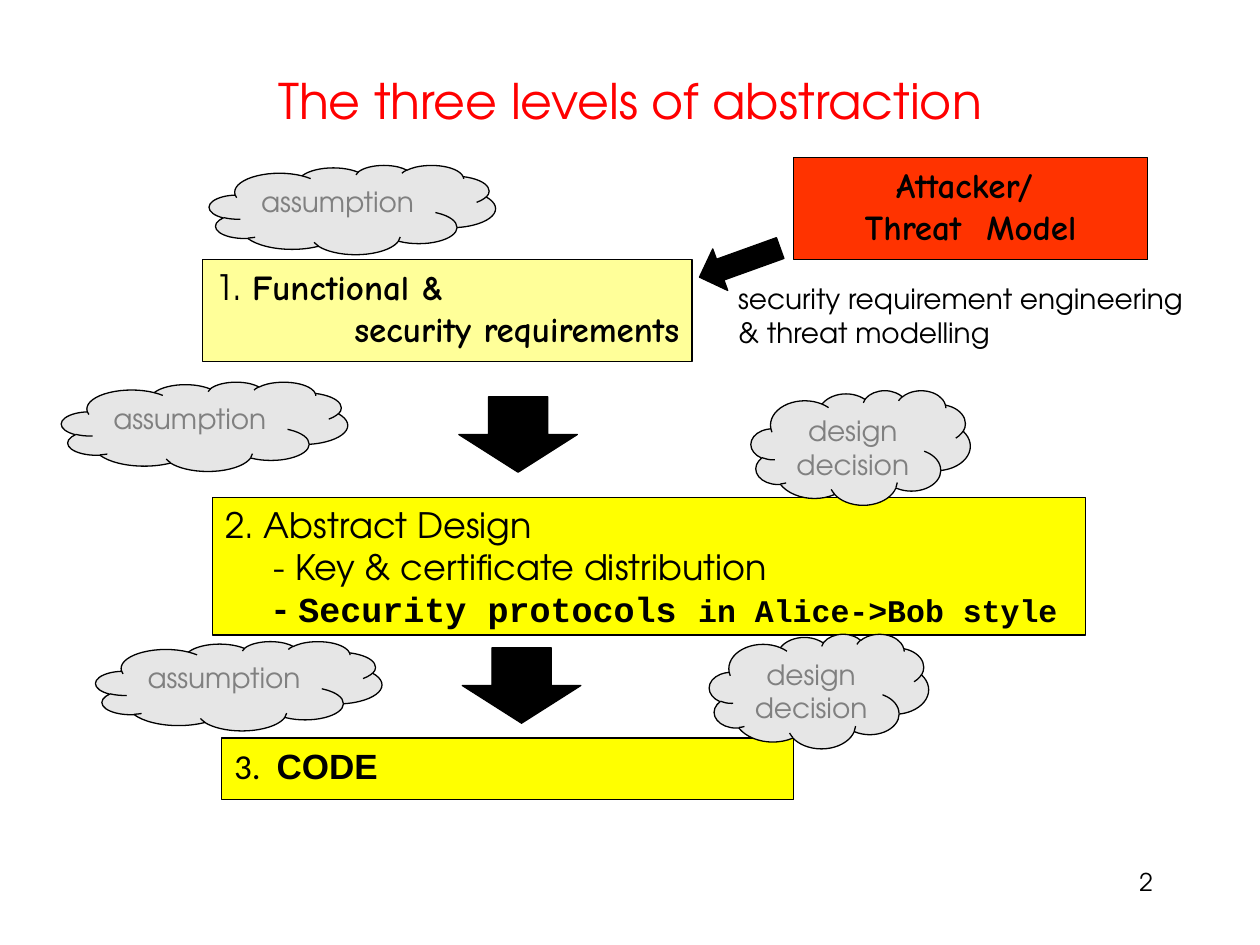
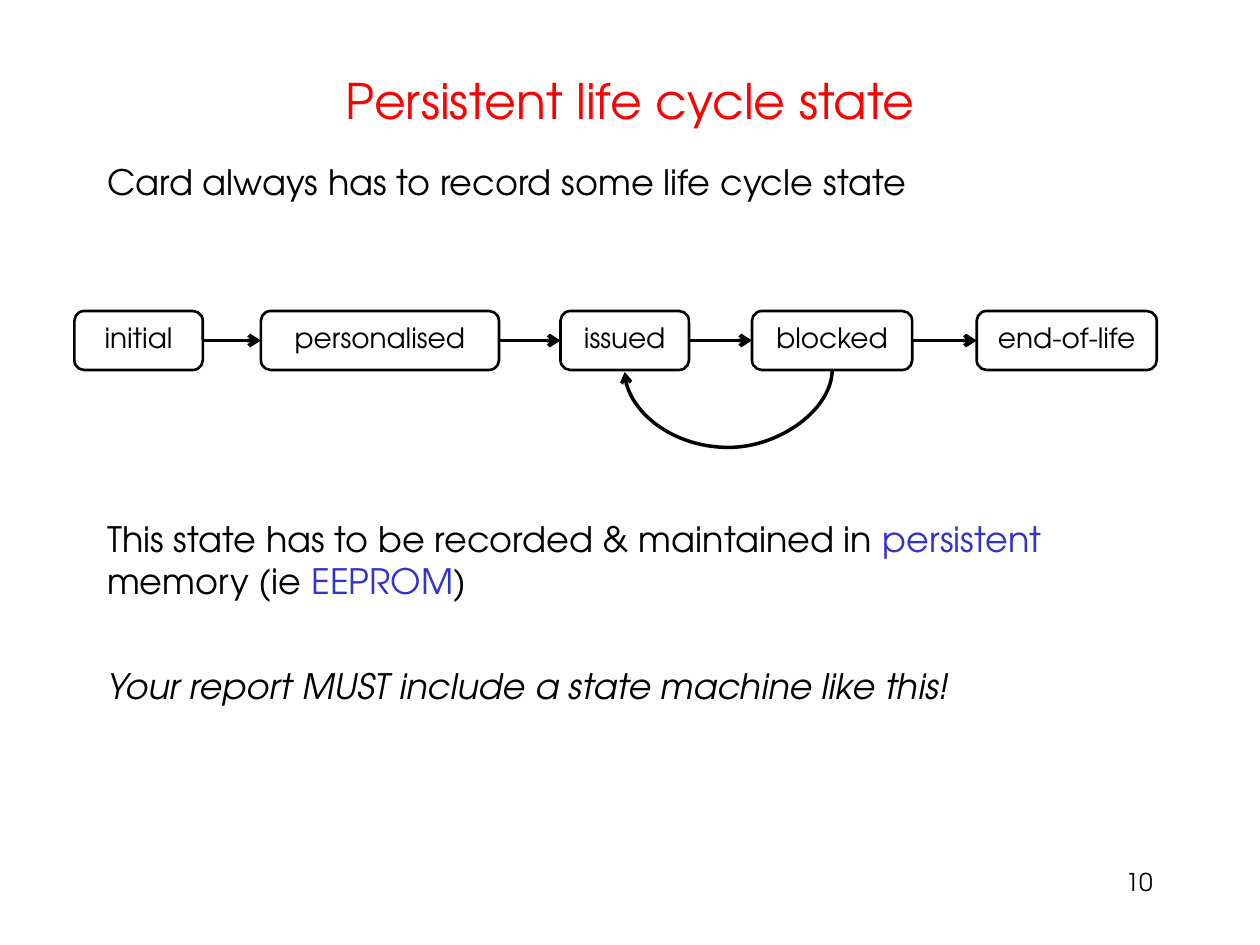
from lxml import etree
from pptx import Presentation
from pptx.dml.color import RGBColor
from pptx.enum import shapes, text
from pptx.oxml import ns
from pptx.util import Cm, Pt

COLOURS = {
    "title": "FF0000",
    "text": "000000",
    "muted": "808080",
    "emphasis": "3333CC",
    "line": "000000",
    "cloud": "E6E6E6",
    "requirements": "FFFF99",
    "level": "FFFF00",
    "threat": "FF3300",
}
FONT = "TeX Gyre Adventor"
LEFT, CENTER, RIGHT = text.PP_ALIGN.LEFT, text.PP_ALIGN.CENTER, text.PP_ALIGN.RIGHT
KIND = shapes.MSO_SHAPE
STATE_TOP, STATE_HEIGHT = 6.27, 1.19


def rgb(name):
    return RGBColor.from_string(COLOURS[name])


def run(content, **style):
    return content, style


def format_run(piece, size, color="text", font=FONT, bold=False, italic=False):
    piece.font.name = font
    piece.font.size = Pt(size)
    piece.font.bold = bold
    piece.font.italic = italic
    piece.font.color.rgb = rgb(color)


def write_paragraph(paragraph, runs, size, align=LEFT, indent=0, before=0):
    paragraph.alignment = align
    paragraph.space_before = Pt(before)
    if indent:
        paragraph._p.get_or_add_pPr().set("marL", str(Cm(indent)))
    for content, style in runs:
        piece = paragraph.add_run()
        piece.text = content
        format_run(piece, **{"size": size, **style})


def write_text(shape, paragraphs, size=20, anchor=text.MSO_ANCHOR.TOP):
    frame = shape.text_frame
    frame.word_wrap = True
    frame.vertical_anchor = anchor
    for index, (runs, layout) in enumerate(paragraphs):
        paragraph = frame.add_paragraph() if index else frame.paragraphs[0]
        write_paragraph(paragraph, runs, size, **layout)


def add_text(slide, box, paragraphs, **options):
    shape = slide.shapes.add_textbox(*map(Cm, box))
    write_text(shape, paragraphs, **options)


def add_figure(slide, kind, box, fill=None, width=0.75):
    shape = slide.shapes.add_shape(kind, *map(Cm, box))
    shape.shadow.inherit = False
    if fill:
        shape.fill.solid()
        shape.fill.fore_color.rgb = rgb(fill)
    else:
        shape.fill.background()
    shape.line.color.rgb = rgb("line")
    shape.line.width = Pt(width)
    return shape


def add_level(slide, box, fill, paragraphs):
    write_text(add_figure(slide, KIND.RECTANGLE, box, fill), paragraphs)


def add_cloud(slide, position, size, label, align):
    cloud = add_figure(slide, KIND.CLOUD, position + size, "cloud")
    write_text(cloud, [([run(label, color="muted")], {"align": align})], size=16)


def add_state(slide, left, width, label):
    box = (left, STATE_TOP, width, STATE_HEIGHT)
    state = add_figure(slide, KIND.ROUNDED_RECTANGLE, box, width=1.5)
    write_text(state, [([run(label)], {"align": CENTER})], size=16)


def add_arrow(slide, kind, start, end, width):
    arrow = slide.shapes.add_connector(kind, *map(Cm, start + end))
    arrow.line.color.rgb = rgb("line")
    arrow.line.width = Pt(width)
    line = arrow.line._get_or_add_ln()
    etree.SubElement(line, ns.qn("a:tailEnd"), type="arrow")
    etree.SubElement(arrow._element.spPr, ns.qn("a:effectLst"))
    return arrow


def add_return_arrow(slide, start_x, end_x, top, depth):
    drop = 0.04
    span = start_x - end_x
    left = (start_x + end_x - drop) / 2
    upper = top + (drop - span) / 2
    arrow = add_arrow(slide, shapes.MSO_CONNECTOR.CURVE,
                      (left, upper), (left + drop, upper + span), 2)
    properties = arrow._element.spPr
    properties.find(ns.qn("a:xfrm")).set("rot", str(90 * 60000))
    geometry = properties.find(ns.qn("a:prstGeom"))
    adjustments = geometry.find(ns.qn("a:avLst"))
    if adjustments is None:
        adjustments = etree.SubElement(geometry, ns.qn("a:avLst"))
    etree.SubElement(adjustments, ns.qn("a:gd"), name="adj1",
                     fmla=f"val {round(depth / drop * 100000)}")


def add_slide(presentation, title, number):
    slide = presentation.slides.add_slide(presentation.slide_layouts[6])
    add_text(slide, (1.91, 0.91, 21.59, 2.21),
             [([run(title, color="title")], {"align": CENTER})],
             size=28, anchor=text.MSO_ANCHOR.MIDDLE)
    add_text(slide, (18.21, 17.35, 5.28, 1.27),
             [([run(number)], {"align": RIGHT})], size=14)
    return slide


def build_abstraction_levels(presentation):
    slide = add_slide(presentation, "The three levels of abstraction", "2")
    comic = {"font": "Comic Neue", "bold": True}
    courier = {"font": "Courier New", "bold": True}
    add_level(slide, (4.29, 10.03, 17.6, 2.77), "level", [
        ([run("2. Abstract Design")], {}),
        ([run("- Key & certificate distribution")], {"indent": 0.98}),
        ([run("- ", bold=True), run("Security protocols ", **courier),
          run("in Alice->Bob style", size=18, **courier)], {"indent": 0.98}),
    ])
    add_level(slide, (4.09, 5.23, 9.86, 2.06), "requirements", [
        ([run("1. "), run("Functional &", **comic)], {}),
        ([run("security requirements", **comic)], {"align": RIGHT}),
    ])
    add_level(slide, (16, 3.18, 7.14, 2.06), "threat", [
        ([run(line, **comic)], {"align": CENTER})
        for line in ("Attacker/ ", "Threat  Model")
    ])
    add_level(slide, (4.47, 14.88, 11.53, 1.24), "level", [
        ([run("3.  ", font="Calibri"), run("CODE", font="Arial", bold=True)], {}),
    ])

    for left, top in ((9.25, 8), (9.32, 13.06)):
        add_figure(slide, KIND.DOWN_ARROW, (left, top, 2.39, 1.52), "line")
    threat_arrow = add_figure(slide, KIND.LEFT_ARROW, (14.05, 4.85, 1.73, 0.89), "line")
    threat_arrow.rotation = 340.2

    for position in ((4.22, 3.33), (1.24, 7.7), (1.93, 12.93)):
        add_cloud(slide, position, (5.77, 1.8), "assumption", LEFT)
    for position in ((15.14, 7.87), (14.3, 12.78)):
        add_cloud(slide, position, (4.42, 2.31), "design decision", CENTER)

    add_text(slide, (14.63, 5.56, 9.88, 1.63), [
        ([run("security requirement engineering")], {}),
        ([run("& threat modelling")], {}),
    ], size=16)


def build_life_cycle(presentation):
    slide = add_slide(presentation, "Persistent life cycle state", "10")
    add_text(slide, (1.91, 3.12, 21.59, 13.03), [
        ([run("Card always has to record some life cycle state")], {"before": 6}),
        ([run("This state has to be recorded & maintained in "),
          run("persistent", color="emphasis"), run(" memory (ie "),
          run("EEPROM", color="emphasis"), run(")")], {"before": 180}),
        ([run("Your report MUST include a state machine like this!", italic=True)],
         {"before": 36}),
    ])

    states = {
        "initial": (1.5, 2.59),
        "personalised": (5.26, 4.8),
        "issued": (11.3, 2.59),
        "blocked": (15.16, 3.23),
        "end-of-life": (19.69, 3.63),
    }
    for label, (left, width) in states.items():
        add_state(slide, left, width, label)

    middle = STATE_TOP + STATE_HEIGHT / 2
    places = list(states.values())
    for (left, width), (next_left, _) in zip(places, places[1:]):
        add_arrow(slide, shapes.MSO_CONNECTOR.STRAIGHT,
                  (left + width, middle), (next_left, middle), 2.25)

    blocked, issued = (left + width / 2 for left, width in
                       (states["blocked"], states["issued"]))
    add_return_arrow(slide, blocked, issued, STATE_TOP + STATE_HEIGHT, 1.56)


def main():
    presentation = Presentation()
    presentation.slide_width = Cm(25.4)
    presentation.slide_height = Cm(19.05)
    build_abstraction_levels(presentation)
    build_life_cycle(presentation)
    presentation.save("out.pptx")


if __name__ == "__main__":
    main()
